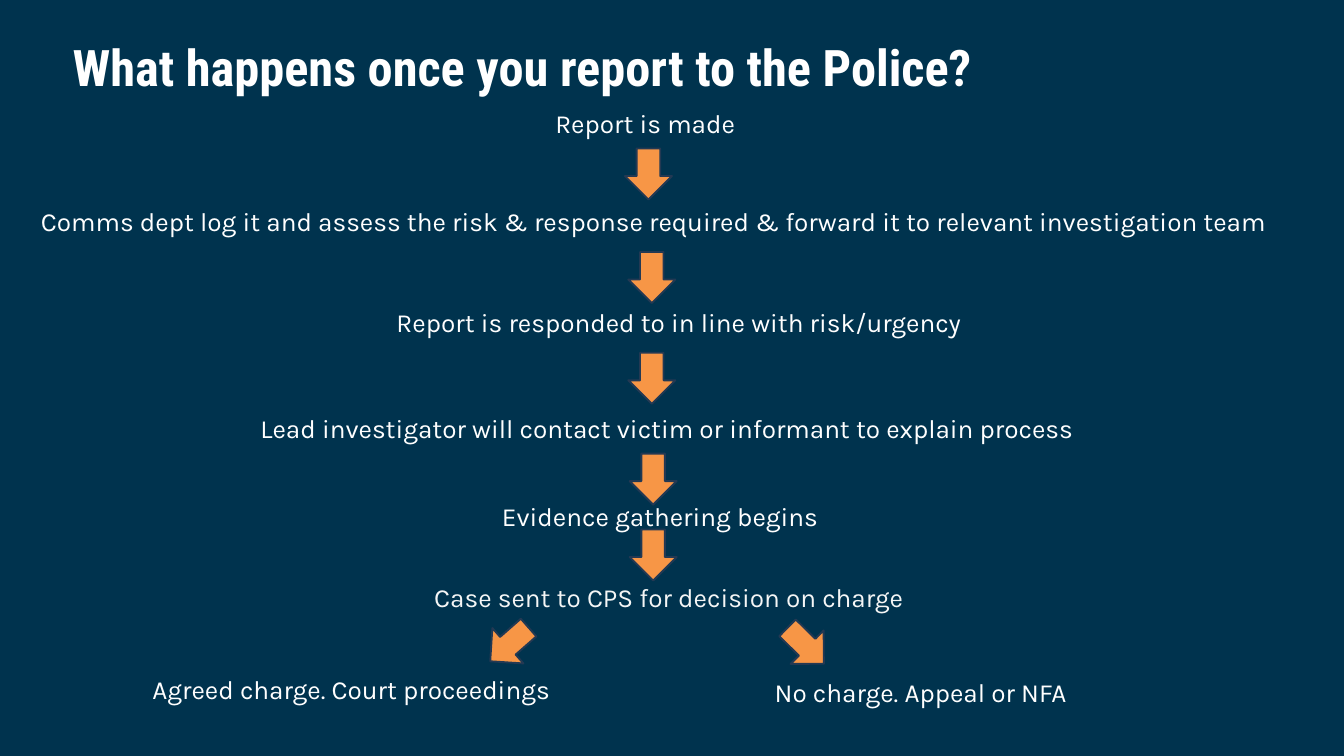
from pptx import Presentation, util as u
from pptx.dml.color import RGBColor
from pptx.enum import shapes, text

# Content: wording, then centre column, top row and width on a one-inch grid
COLUMNS, ROWS = 20, 11.25
COLORS = {"navy": "00334E", "white": "FFFFFF", "pale": "F5F6F6",
          "orange": "F79646", "edge": "233953"}
TITLE = "What happens once you report to the Police?"
STEPS = [
    ("Report is made", 9.6, 1.55, 10.5, "white"),
    ("Comms dept log it and assess the risk & response required & forward it "
     "to relevant investigation team", 9.72, 3, 18.9, "white"),
    ("Report is responded to in line with risk/urgency", 10.1, 4.51, 18.9, "white"),
    ("Lead investigator will contact victim or informant to explain process",
     9.92, 6.09, 18.9, "white"),
    ("Evidence gathering begins", 9.82, 7.4, 16.8, "white"),
    ("Case sent to CPS for decision on charge", 9.95, 8.6, 16.6, "pale"),
]
# Wording, left column, top row, width
OUTCOMES = [("Agreed charge. Court proceedings", 2.17, 9.97, 7.14),
            ("No charge. Appeal or NFA", 11.43, 10.02, 5.83)]
# Left column, top row, rotation
ARROWS = [(9.3, 2.21, 0), (9.35, 3.75, 0), (9.35, 5.25, 0), (9.37, 6.75, 0),
          (9.37, 7.88, 0), (7.23, 9.21, 48.7), (11.64, 9.23, 314.6)]
ARROW_WIDTH, ARROW_HEIGHT = 0.7, 0.76
LINE_HEIGHT = 0.57


def color(name):
    return RGBColor.from_string(COLORS[name])


def add_text(page, words, left, top, width, height=LINE_HEIGHT, size=28,
             font="Karla", tint="white", bold=False):
    box = page.shapes.add_textbox(*map(u.Inches, (left, top, width, height)))
    box.text_frame.word_wrap = True
    para = box.text_frame.paragraphs[0]
    para.font.name, para.font.size, para.font.bold = font, u.Pt(size), bold
    para.font.color.rgb = color(tint)
    para.add_run().text = words
    return box


def add_arrow(page, left, top, rotation):
    arrow = page.shapes.add_shape(
        shapes.MSO_SHAPE.DOWN_ARROW,
        *map(u.Inches, (left, top, ARROW_WIDTH, ARROW_HEIGHT)))
    arrow.shadow.inherit = False
    arrow.rotation = rotation
    arrow.fill.solid()
    arrow.fill.fore_color.rgb = color("orange")
    arrow.line.color.rgb = color("edge")
    arrow.line.width = u.Pt(2)


def main():
    deck = Presentation()
    deck.slide_width, deck.slide_height = u.Inches(COLUMNS), u.Inches(ROWS)
    page = deck.slides.add_slide(deck.slide_layouts[6])
    page.background.fill.solid()
    page.background.fill.fore_color.rgb = color("navy")

    # Title
    box = add_text(page, TITLE, 1.08, 0.54, 16.94, 0.91, 54,
                   "Roboto Condensed", bold=True)
    frame = box.text_frame
    frame.margin_left = frame.margin_top = 0
    frame.margin_right = frame.margin_bottom = 0

    # Arrows
    for arrow in ARROWS:
        add_arrow(page, *arrow)

    # Steps, each centred on its column
    for words, centre, top, width, tint in STEPS:
        box = add_text(page, words, centre - width / 2, top, width, tint=tint)
        box.text_frame.paragraphs[0].alignment = text.PP_ALIGN.CENTER

    # Outcomes
    for outcome in OUTCOMES:
        add_text(page, *outcome)

    deck.save("out.pptx")


if __name__ == "__main__":
    main()
